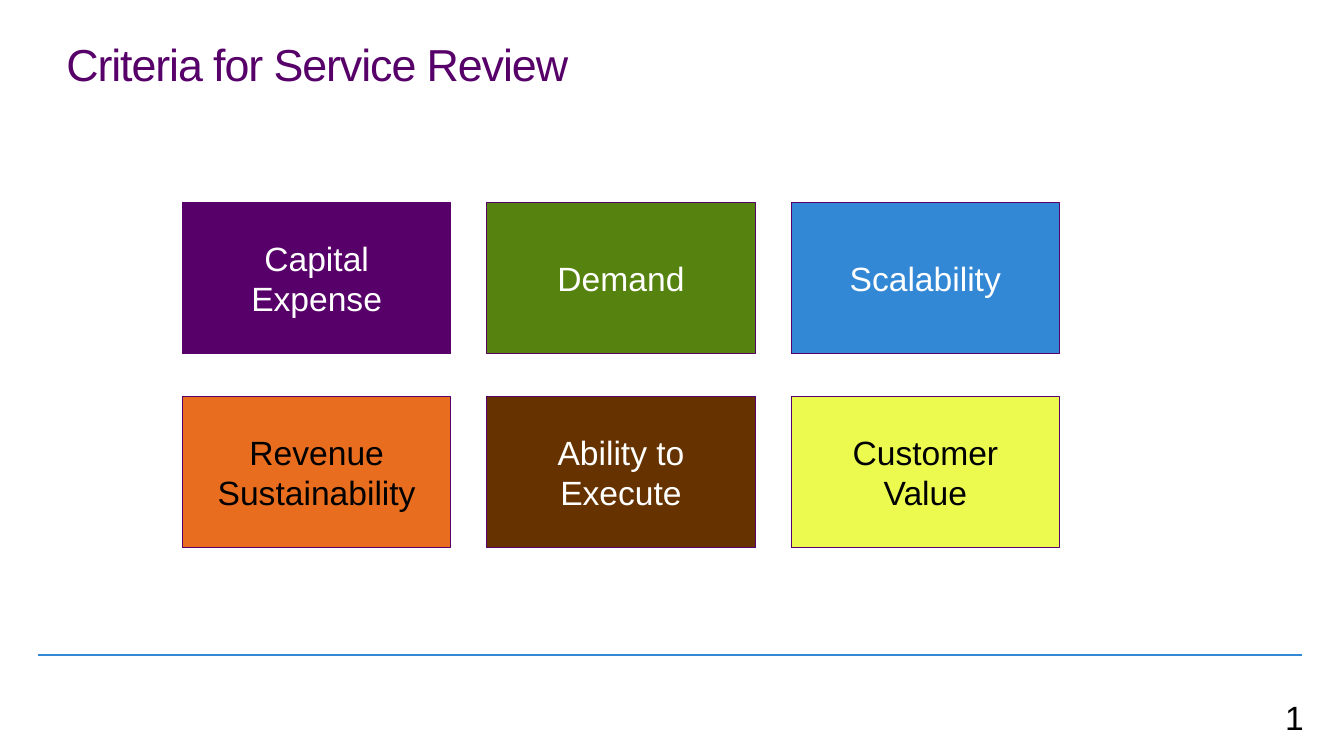
import dataclasses

import pptx
import pptx.dml.color
import pptx.enum.shapes
import pptx.enum.text
import pptx.oxml.ns
import pptx.presentation
import pptx.slide
import pptx.text.text
import pptx.util
from lxml import etree

Cm = pptx.util.Cm
Pt = pptx.util.Pt
RGBColor = pptx.dml.color.RGBColor
Anchor = pptx.enum.text.MSO_ANCHOR
Align = pptx.enum.text.PP_ALIGN

PURPLE = RGBColor(0x58, 0x00, 0x69)
GREEN = RGBColor(0x56, 0x83, 0x0F)
BLUE = RGBColor(0x33, 0x88, 0xD5)
ORANGE = RGBColor(0xE8, 0x6D, 0x1F)
BROWN = RGBColor(0x66, 0x33, 0x00)
YELLOW = RGBColor(0xEC, 0xFA, 0x50)
WHITE = RGBColor(0xFF, 0xFF, 0xFF)
BLACK = RGBColor(0x00, 0x00, 0x00)

FONT = "Arial"
COLS = 3
LEFT, TOP = 4.6, 5.11
WIDTH, HEIGHT = 6.76, 3.81
STEP_X, STEP_Y = 7.67, 4.88


@dataclasses.dataclass(frozen=True)
class Card:
    label: str
    fill: RGBColor
    ink: RGBColor


CARDS = [
    Card("Capital Expense", PURPLE, WHITE),
    Card("Demand", GREEN, WHITE),
    Card("Scalability", BLUE, WHITE),
    Card("Revenue Sustainability", ORANGE, BLACK),
    Card("Ability to Execute", BROWN, WHITE),
    Card("Customer Value", YELLOW, BLACK),
]


def add_run(para: pptx.text.text._Paragraph, text: str, size: float,
            ink: RGBColor, track: int = 0) -> None:
    """Add a run; track is letter spacing in hundredths of a point."""
    run = para.add_run()
    run.text = text
    run.font.name = FONT
    run.font.size = Pt(size)
    run.font.color.rgb = ink
    if track:
        run.font._element.set("spc", str(track))


def set_frame(frame: pptx.text.text.TextFrame, side: float, edge: float,
              anchor: Anchor) -> None:
    frame.word_wrap = True
    frame.auto_size = pptx.enum.text.MSO_AUTO_SIZE.NONE
    frame.margin_left = frame.margin_right = Cm(side)
    frame.margin_top = frame.margin_bottom = Cm(edge)
    frame.vertical_anchor = anchor


def add_title(slide: pptx.slide.Slide, text: str) -> None:
    title = slide.shapes.title
    title.left, title.top = Cm(1.42), Cm(0.94)
    title.width, title.height = Cm(20.98), Cm(2.49)
    set_frame(title.text_frame, 0.25, 0.13, Anchor.TOP)
    para = title.text_frame.paragraphs[0]
    para.alignment = Align.LEFT
    para.line_spacing = 0.9
    add_run(para, text, 32, PURPLE, -80)


def add_card(slide: pptx.slide.Slide, card: Card, row: int, col: int) -> None:
    box = slide.shapes.add_shape(
        pptx.enum.shapes.MSO_SHAPE.RECTANGLE,
        Cm(LEFT + col * STEP_X), Cm(TOP + row * STEP_Y),
        Cm(WIDTH), Cm(HEIGHT))
    box.shadow.inherit = False
    box.fill.solid()
    box.fill.fore_color.rgb = card.fill
    box.line.color.rgb = PURPLE
    box.line.width = Pt(0.75)
    set_frame(box.text_frame, 0.51, 0.41, Anchor.MIDDLE)
    para = box.text_frame.paragraphs[0]
    para.alignment = Align.CENTER
    add_run(para, card.label, 24, card.ink)


def add_rule(slide: pptx.slide.Slide) -> None:
    rule = slide.shapes.add_connector(
        pptx.enum.shapes.MSO_CONNECTOR.STRAIGHT,
        Cm(0.97), Cm(16.51), Cm(32.82), Cm(16.51))
    rule.line.color.rgb = BLUE
    rule.line.width = Pt(1.5)
    etree.SubElement(rule._element.spPr, pptx.oxml.ns.qn("a:effectLst"))


def add_number(slide: pptx.slide.Slide, text: str) -> None:
    box = slide.shapes.add_textbox(Cm(31.88), Cm(17.15), Cm(1.75), Cm(1.5))
    set_frame(box.text_frame, 0.51, 0.41, Anchor.TOP)
    para = box.text_frame.paragraphs[0]
    para.space_after = Pt(6)
    add_run(para, text, 24, BLACK, -70)


def main() -> None:
    deck = pptx.Presentation()
    deck.slide_width, deck.slide_height = Cm(33.87), Cm(19.05)
    slide = deck.slides.add_slide(deck.slide_layouts[5])

    # Footer rule and title
    add_rule(slide)
    add_title(slide, "Criteria for Service Review")

    # Grid of criteria
    for place, card in enumerate(CARDS):
        row, col = divmod(place, COLS)
        add_card(slide, card, row, col)

    # Page number
    add_number(slide, "1")
    deck.save("out.pptx")


if __name__ == "__main__":
    main()
